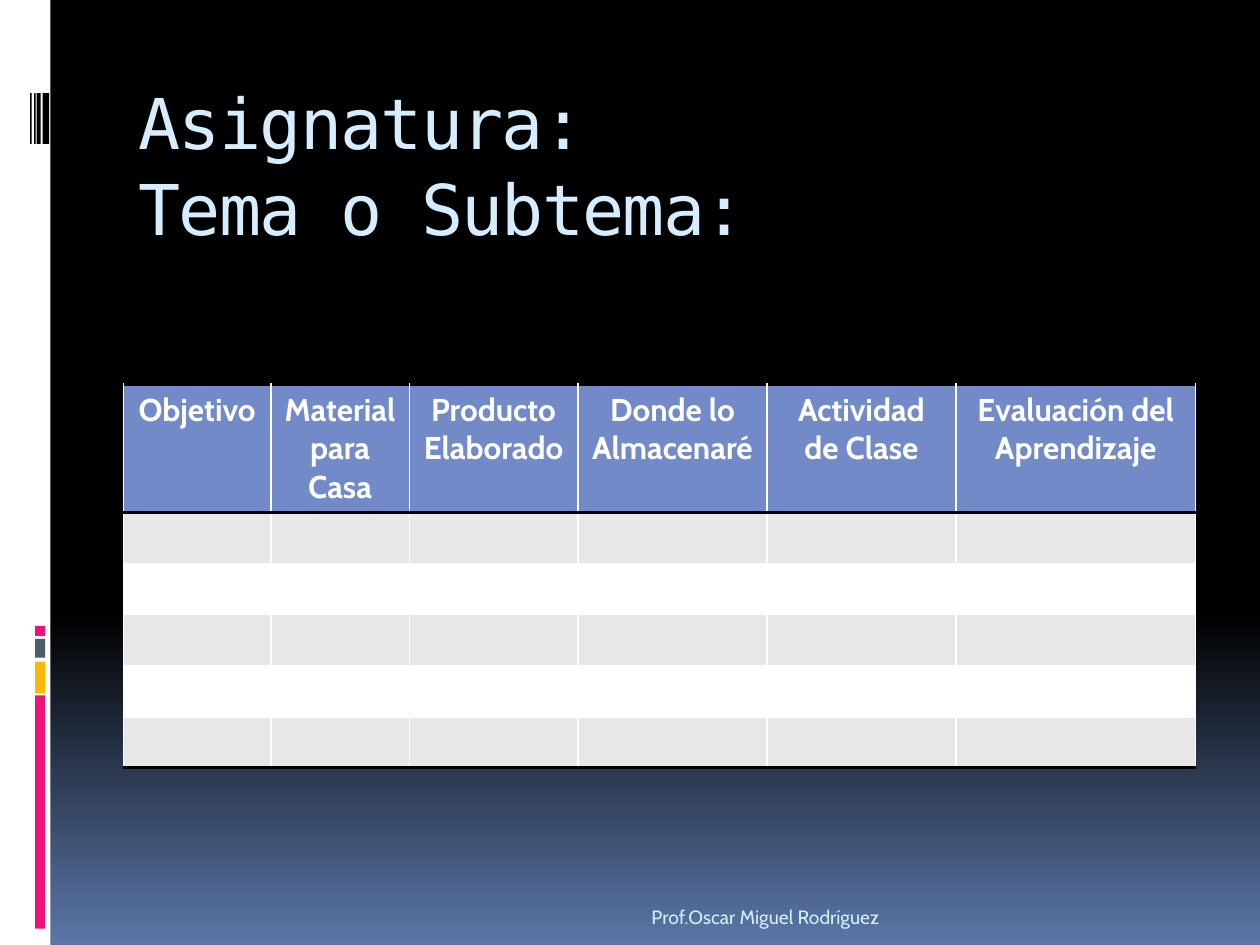
from typing import NamedTuple

from lxml import etree
from pptx import Presentation
from pptx.dml.color import RGBColor
from pptx.enum.shapes import MSO_SHAPE
from pptx.enum.text import MSO_ANCHOR, MSO_AUTO_SIZE, PP_ALIGN
from pptx.oxml.ns import qn
from pptx.util import Cm, Pt

RECTANGLE = MSO_SHAPE.RECTANGLE
TOP, BOTTOM = MSO_ANCHOR.TOP, MSO_ANCHOR.BOTTOM
LEFT, CENTER, RIGHT = PP_ALIGN.LEFT, PP_ALIGN.CENTER, PP_ALIGN.RIGHT
NO_AUTOFIT = MSO_AUTO_SIZE.NONE

BLACK = RGBColor(0x00, 0x00, 0x00)
WHITE = RGBColor(0xFF, 0xFF, 0xFF)
STEEL_BLUE = RGBColor(0x5B, 0x77, 0xA8)
PINK = RGBColor(0xEA, 0x15, 0x7A)
AMBER = RGBColor(0xFE, 0xB8, 0x0A)
SLATE = RGBColor(0x4E, 0x5B, 0x6F)
PALE_BLUE = RGBColor(0xD6, 0xEC, 0xFF)
HEADER_BLUE = RGBColor(0x73, 0x8A, 0xC8)
BAND_GREY = RGBColor(0xE7, 0xE7, 0xE7)

TITLE_FONT = "DejaVu Sans Mono"
BODY_FONT = "Cabin"


class Bar(NamedTuple):
    left: float
    top: float
    width: float
    height: float
    color: RGBColor


class Column(NamedTuple):
    width: float
    heading: tuple[str, ...]


BARS = [
    Bar(0, 0, 1.02, 19.05, WHITE),
    # Coloured marks
    Bar(0.71, 14.02, 0.2, 4.7, PINK),
    Bar(0.71, 13.34, 0.2, 0.64, AMBER),
    Bar(0.71, 12.88, 0.2, 0.38, SLATE),
    Bar(0.71, 12.62, 0.2, 0.2, PINK),
    # Barcode
    *(Bar(left, 1.88, width, 1.02, BLACK)
      for left, width in ((0.86, 0.13), (0.74, 0.08), (0.69, 0.03), (0.61, 0.03))),
]

COLUMNS = [
    Column(2.97, ("Objetivo",)),
    Column(2.79, ("Material para Casa",)),
    Column(3.4, ("Producto", "Elaborado")),
    Column(3.81, ("Donde lo Almacenaré",)),
    Column(3.81, ("Actividad de Clase",)),
    Column(4.83, ("Evaluación del Aprendizaje",)),
]
BODY_ROWS = 5
HEADER_HEIGHT, ROW_HEIGHT = 2.55, 1.03


def set_background(slide, stops: list[tuple[int, RGBColor]]) -> None:
    fill = slide.background.fill
    fill.gradient()
    fill.gradient_angle = 270
    stop_list = slide.background._cSld.find(".//" + qn("a:gsLst"))
    for old_stop in list(stop_list):
        stop_list.remove(old_stop)
    for percent, color in stops:
        stop = etree.SubElement(stop_list, qn("a:gs"), pos=str(percent * 1000))
        etree.SubElement(stop, qn("a:srgbClr"), val=str(color))


def add_bar(slide, bar: Bar) -> None:
    shape = slide.shapes.add_shape(
        RECTANGLE, Cm(bar.left), Cm(bar.top), Cm(bar.width), Cm(bar.height))
    shape.shadow.inherit = False
    shape.fill.solid()
    shape.fill.fore_color.rgb = bar.color
    shape.line.fill.background()


def add_run(paragraph, text: str, font_name: str, size: float,
            color: RGBColor, bold: bool = False):
    run = paragraph.add_run()
    run.text = text
    run.font.name = font_name
    run.font.size = Pt(size)
    run.font.color.rgb = color
    run.font.bold = bold
    return run


def fill_title(slide, lines: list[str]) -> None:
    title = slide.shapes.title
    title.left, title.top, title.width, title.height = Cm(2.54), Cm(1.42), Cm(21.59), Cm(2.54)
    frame = title.text_frame
    frame.word_wrap = True
    frame.auto_size = NO_AUTOFIT
    frame.vertical_anchor = TOP
    paragraph = frame.paragraphs[0]
    paragraph.alignment = LEFT
    paragraph.line_spacing = 1.03
    for index, line in enumerate(lines):
        if index:
            paragraph.add_line_break()
        run = add_run(paragraph, line, TITLE_FONT, 40, PALE_BLUE)
        run.font._element.set("spc", "-100")


def set_border(cell, side: str) -> None:
    border = etree.Element(qn(f"a:{side}"), w=str(Pt(2)))
    solid = etree.SubElement(border, qn("a:solidFill"))
    etree.SubElement(solid, qn("a:srgbClr"), val=str(BLACK))
    # Borders come before the cell fill
    properties = cell._tc.get_or_add_tcPr()
    properties.insert(len(properties.findall(qn("a:lnT"))), border)


def fill_cell(cell, color: RGBColor) -> None:
    cell.fill.solid()
    cell.fill.fore_color.rgb = color


def add_plan_table(slide) -> None:
    table = slide.shapes.add_table(
        BODY_ROWS + 1, len(COLUMNS), Cm(2.49), Cm(7.75),
        Cm(sum(column.width for column in COLUMNS)),
        Cm(HEADER_HEIGHT + BODY_ROWS * ROW_HEIGHT)).table
    for index, row in enumerate(table.rows):
        row.height = Cm(ROW_HEIGHT if index else HEADER_HEIGHT)

    for column_index, column in enumerate(COLUMNS):
        table.columns[column_index].width = Cm(column.width)

        # Heading
        header = table.cell(0, column_index)
        fill_cell(header, HEADER_BLUE)
        set_border(header, "lnT")
        set_border(header, "lnB")
        frame = header.text_frame
        for line_index, line in enumerate(column.heading):
            paragraph = frame.add_paragraph() if line_index else frame.paragraphs[0]
            paragraph.alignment = CENTER
            add_run(paragraph, line, BODY_FONT, 18, WHITE, bold=True)

        # Banded empty rows
        for row_index in range(1, BODY_ROWS + 1):
            fill_cell(table.cell(row_index, column_index),
                      BAND_GREY if row_index % 2 else WHITE)
        set_border(table.cell(BODY_ROWS, column_index), "lnB")


def add_author(slide, author: str) -> None:
    box = slide.shapes.add_textbox(Cm(2.54), Cm(17.83), Cm(15.44), Cm(1.02))
    frame = box.text_frame
    frame.word_wrap = True
    frame.vertical_anchor = BOTTOM
    paragraph = frame.paragraphs[0]
    paragraph.alignment = RIGHT
    add_run(paragraph, author, BODY_FONT, 11, PALE_BLUE)


def main() -> None:
    presentation = Presentation()
    presentation.slide_width, presentation.slide_height = Cm(25.4), Cm(19.05)
    slide = presentation.slides.add_slide(presentation.slide_layouts[5])

    set_background(slide, [(0, BLACK), (65, BLACK), (100, STEEL_BLUE)])
    for bar in BARS:
        add_bar(slide, bar)
    fill_title(slide, ["Asignatura:", "Tema o Subtema:"])
    add_plan_table(slide)
    add_author(slide, "Prof.Oscar Miguel Rodríguez")

    presentation.save("out.pptx")


if __name__ == "__main__":
    main()
